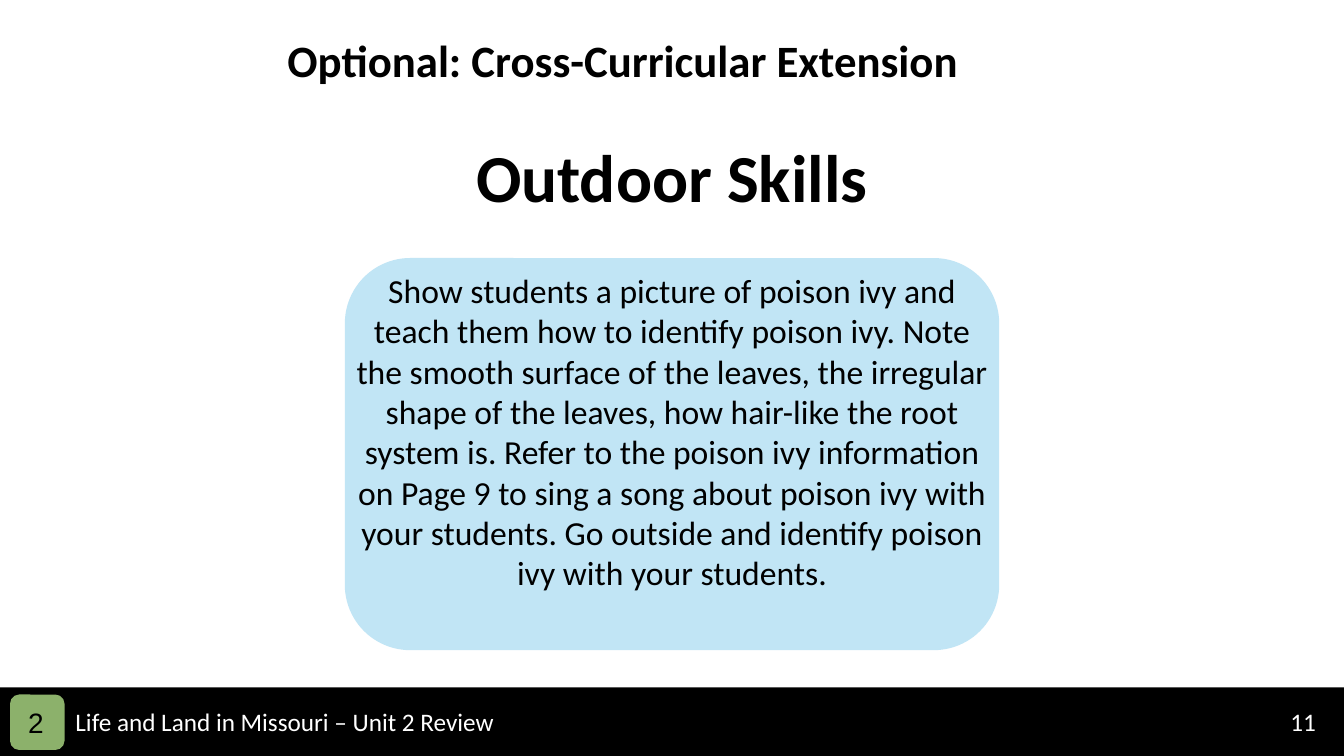
"""Build the Outdoor Skills extension slide."""
from pptx import Presentation
from pptx.dml.color import RGBColor
from pptx.enum.shapes import MSO_SHAPE
from pptx.enum.text import PP_ALIGN
from pptx.util import Inches, Pt

RECT, ROUND = MSO_SHAPE.RECTANGLE, MSO_SHAPE.ROUNDED_RECTANGLE
LEFT, MID = PP_ALIGN.LEFT, PP_ALIGN.CENTER
WIDE, HIGH = 13.33, 7.5
HEX = {"black": "000000", "white": "FFFFFF", "green": "8CB16B", "sky": "C1E5F5"}

STYLES = {
    "foot": ({"name": "Calibri", "size": Pt(18)}, "white", LEFT),
    "badge": ({"name": "Arial", "size": Pt(20)}, "black", LEFT),
    "title": ({"name": "Calibri", "size": Pt(48), "bold": True}, "black", MID),
    "head": ({"name": "Calibri", "size": Pt(32), "bold": True}, "black", MID),
    "body": ({"name": "Calibri", "size": Pt(24)}, "black", MID),
}

BODY = (
    "Show students a picture of poison ivy and teach them how to identify "
    "poison ivy. Note the smooth surface of the leaves, the irregular shape "
    "of the leaves, how hair-like the root system is. Refer to the poison ivy "
    "information on Page 9 to sing a song about poison ivy with your students. "
    "Go outside and identify poison ivy with your students."
)

BAR, FOOT = 6.82, 6.96
CARD = 6.49
EDGE = (WIDE - CARD) / 2

PANELS = [
    (RECT, "black", (0, BAR, WIDE, 0.7)),
    (ROUND, "green", (0.1, 6.89, 0.54, 0.55)),
    (ROUND, "sky", (EDGE, 2.56, CARD, 3.89)),
]
TEXTS = [
    ("11", "foot", (12.7, FOOT, 0.54, 0.4)),
    ("Life and Land in Missouri – Unit 2 Review", "foot", (0.65, FOOT, 7.83, 0.4)),
    ("2", "badge", (0.18, 6.95, 3.57, 0.44)),
    ("Outdoor Skills", "title", ((WIDE - 7.6) / 2, 1.29, 7.6, 0.91)),
    ("Optional: Cross-Curricular Extension", "head", (2.13, 0.28, 8.1, 0.64)),
    (BODY, "body", (EDGE, 2.63, CARD, 3.74)),
]


def tint(name):
    return RGBColor.from_string(HEX[name])


def add_panel(slide, kind, fill, box):
    panel = slide.shapes.add_shape(kind, *map(Inches, box))
    panel.shadow.inherit = False
    panel.fill.solid()
    panel.fill.fore_color.rgb = tint(fill)
    panel.line.fill.background()


def add_text(slide, words, style, box):
    form, ink, align = STYLES[style]
    frame = slide.shapes.add_textbox(*map(Inches, box)).text_frame
    frame.word_wrap = True
    para = frame.paragraphs[0]
    para.alignment = align
    run = para.add_run()
    run.text = words
    for key, value in form.items():
        setattr(run.font, key, value)
    run.font.color.rgb = tint(ink)


def main():
    deck = Presentation()
    deck.slide_width, deck.slide_height = Inches(WIDE), Inches(HIGH)
    slide = deck.slides.add_slide(deck.slide_layouts[6])
    for panel in PANELS:
        add_panel(slide, *panel)
    for text in TEXTS:
        add_text(slide, *text)
    deck.save("out.pptx")


if __name__ == "__main__":
    main()
